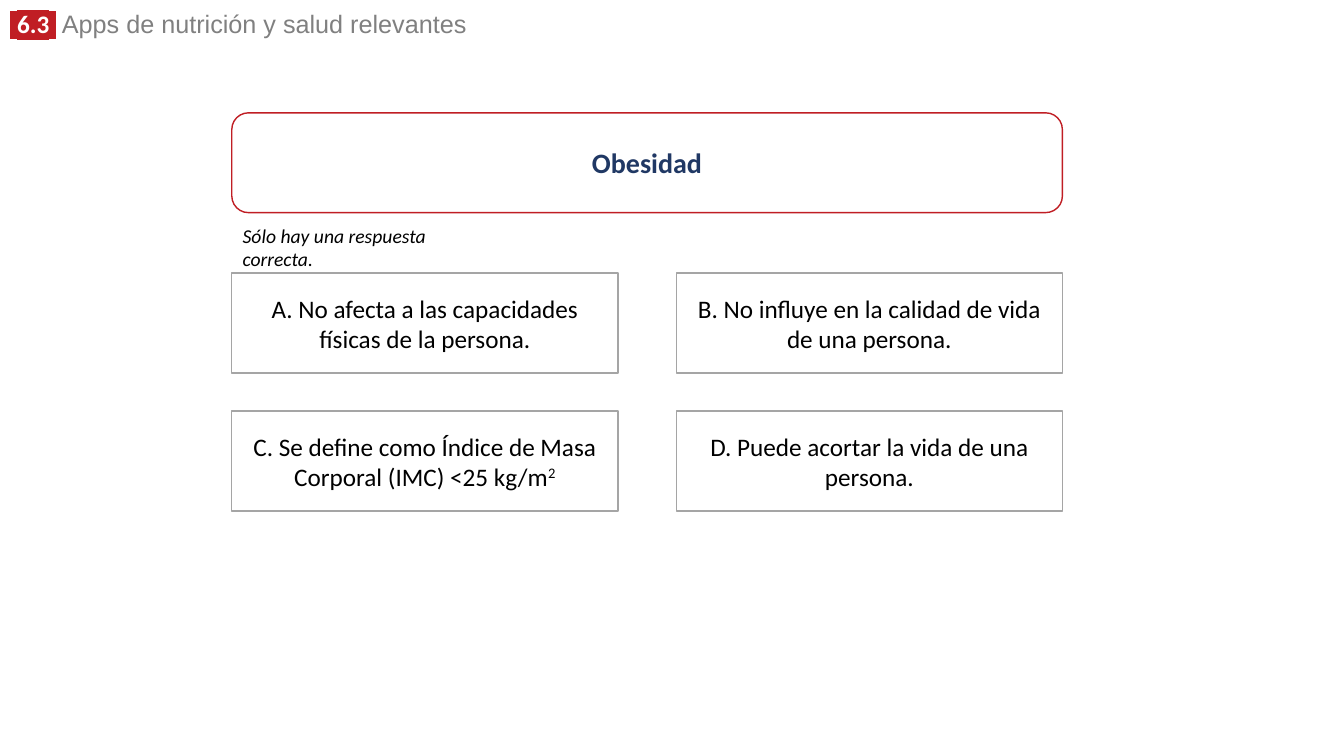
from lxml import etree
from pptx import Presentation
from pptx.dml.color import RGBColor
from pptx.enum.shapes import MSO_SHAPE
from pptx.enum.text import MSO_ANCHOR, MSO_AUTO_SIZE, PP_ALIGN
from pptx.oxml.ns import qn
from pptx.util import Pt

RECTANGLE = MSO_SHAPE.RECTANGLE
ROUNDED = MSO_SHAPE.ROUNDED_RECTANGLE
TOP, MIDDLE = MSO_ANCHOR.TOP, MSO_ANCHOR.MIDDLE
LEFT, CENTER = PP_ALIGN.LEFT, PP_ALIGN.CENTER
NO_AUTOFIT = MSO_AUTO_SIZE.NONE

RED, NAVY, GRAY, LINE_GRAY = "C01E24", "203864", "808080", "A5A5A5"
WHITE, BLACK = "FFFFFF", "000000"
TITLE_ONLY = 5

ANSWERS = [
    ("A. No afecta a las capacidades físicas de la persona.", ""),
    ("B. No influye en la calidad de vida de una persona.", ""),
    ("C. Se define como Índice de Masa Corporal (IMC) <25 kg/m", "2"),
    ("D. Puede acortar la vida de una persona.", ""),
]


def color(hex_code):
    return RGBColor.from_string(hex_code)


def format_run(run, size, hex_code, name="Calibri", bold=False, italic=False):
    run.font.size = Pt(size)
    run.font.name = name
    run.font.bold = bold
    run.font.italic = italic
    run.font.color.rgb = color(hex_code)


def highlight(run, hex_code):
    fill = run._r.get_or_add_rPr().find(qn("a:solidFill"))
    marker = etree.Element(qn("a:highlight"))
    etree.SubElement(marker, qn("a:srgbClr")).set("val", hex_code)
    fill.addnext(marker)


def add_heading(slide, left, top, width, height):
    heading = slide.shapes.title
    heading.left, heading.top = Pt(left), Pt(top)
    heading.width, heading.height = Pt(width), Pt(height)
    frame = heading.text_frame
    frame.word_wrap = True
    frame.auto_size = NO_AUTOFIT
    frame.vertical_anchor = TOP
    paragraph = frame.paragraphs[0]
    paragraph.alignment = LEFT
    paragraph.line_spacing = 0.8
    paragraph.space_before = Pt(0)
    for text, name in ((" ", "Arial"), ("6.3", "Calibri"), (" ", "Arial")):
        number = paragraph.add_run()
        number.text = text
        format_run(number, 18, WHITE, name, bold=True)
        highlight(number, RED)
    topic = paragraph.add_run()
    topic.text = " Apps de nutrición y salud relevantes"
    format_run(topic, 18, GRAY, "Arial")


def add_card(slide, preset, box, text, border, size, hex_code, bold=False):
    card = slide.shapes.add_shape(preset, *(Pt(length) for length in box))
    card.shadow.inherit = False
    card.fill.solid()
    card.fill.fore_color.rgb = color(WHITE)
    card.line.color.rgb = color(border)
    card.line.width = Pt(1)
    frame = card.text_frame
    frame.word_wrap = True
    frame.vertical_anchor = MIDDLE
    frame.text = text
    paragraph = frame.paragraphs[0]
    paragraph.alignment = CENTER
    format_run(paragraph.runs[0], size, hex_code, bold=bold)
    return paragraph


def add_hint(slide, left, top, width, height):
    hint = slide.shapes.add_textbox(Pt(left), Pt(top), Pt(width), Pt(height))
    frame = hint.text_frame
    frame.word_wrap = True
    frame.text = "Sólo hay una respuesta correcta."
    format_run(frame.paragraphs[0].runs[0], 14, BLACK, italic=True)


def add_question(slide, left, top, width):
    card_height, answer_width = 71.3, 275.8
    column_step = width - answer_width
    row_step = 98.6
    answers_top = top + 114.5
    add_card(slide, ROUNDED, (left, top, width, card_height),
             "Obesidad", RED, 20, NAVY, bold=True)
    for index, (text, exponent) in enumerate(ANSWERS):
        row, column = divmod(index, 2)
        box = (left + column * column_step, answers_top + row * row_step,
               answer_width, card_height)
        paragraph = add_card(slide, RECTANGLE, box, text, LINE_GRAY, 18, BLACK)
        if exponent:
            power = paragraph.add_run()
            power.text = exponent
            format_run(power, 18, BLACK)
            power._r.get_or_add_rPr().set("baseline", "30000")
    add_hint(slide, left + 0.6, top + 75.6, 170, 24.2)


def main():
    deck = Presentation()
    deck.slide_width, deck.slide_height = Pt(960), Pt(540)
    slide = deck.slides.add_slide(deck.slide_layouts[TITLE_ONLY])
    add_heading(slide, 0, 6.5, 685.4, 25.2)
    add_question(slide, 165.6, 80.6, 593.3)
    deck.save("out.pptx")


if __name__ == "__main__":
    main()
